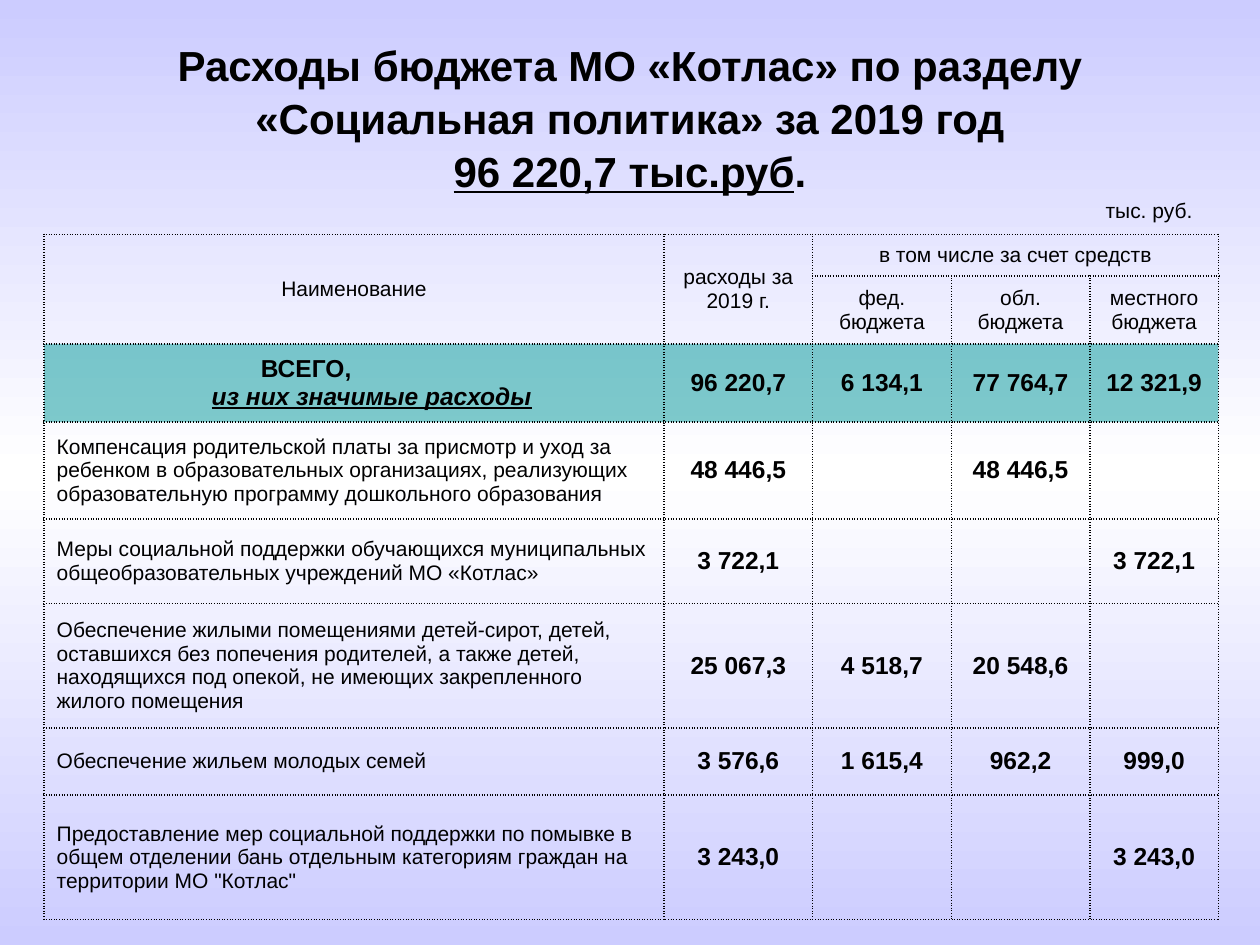
from copy import deepcopy

from lxml import etree
from pptx import Presentation
from pptx.dml.color import RGBColor
from pptx.enum.text import MSO_ANCHOR, PP_ALIGN
from pptx.oxml.ns import qn
from pptx.util import Inches, Pt

MIDDLE = MSO_ANCHOR.MIDDLE
LEFT, CENTER = PP_ALIGN.LEFT, PP_ALIGN.CENTER

COLORS = {"ink": "000000", "edge": "CCCCFF", "center": "FFFFFF", "total": "009999"}
FONT = "Arial"

COLUMNS = [4.92, 1.18, 1.1, 1.1, 1.02]
ROWS = [0.33, 0.54, 0.62, 0.77, 0.67, 0.99, 0.53, 0.99]
BUDGETS = ["фед. бюджета", "обл. бюджета", "местного бюджета"]
TOTALS = ["96 220,7", "6 134,1", "77 764,7", "12 321,9"]
EXPENSES = [
    ("Компенсация родительской платы за присмотр и уход за ребенком в "
     "образовательных организациях, реализующих образовательную программу "
     "дошкольного образования", "48 446,5", "", "48 446,5", ""),
    ("Меры социальной поддержки обучающихся муниципальных общеобразовательных "
     "учреждений МО «Котлас»", "3 722,1", "", "", "3 722,1"),
    ("Обеспечение жилыми помещениями детей-сирот, детей, оставшихся без попечения "
     "родителей, а также детей, находящихся под опекой, не имеющих закрепленного "
     "жилого помещения", "25 067,3", "4 518,7", "20 548,6", ""),
    ("Обеспечение жильем молодых семей", "3 576,6", "1 615,4", "962,2", "999,0"),
    ("Предоставление мер социальной поддержки по помывке в общем отделении бань "
     "отдельным категориям граждан на территории МО \"Котлас\"",
     "3 243,0", "", "", "3 243,0"),
]


def color(name):
    return RGBColor.from_string(COLORS[name])


def add_run(para, text, size, bold=False, italic=False, underline=False):
    span = para.add_run()
    span.text = text
    font = span.font
    font.name, font.size, font.bold = FONT, Pt(size), bold
    font.italic, font.underline = italic, underline
    font.color.rgb = color("ink")


def paint_background(page):
    """Vertical gradient, lightest in the middle."""
    fill = page.background.fill
    fill.gradient()
    fill.gradient_angle = 90
    stop_list = page.element.find(".//" + qn("a:gsLst"))
    stop_list.insert(1, deepcopy(stop_list[0]))
    for stop, position, name in zip(fill.gradient_stops, (0, 0.5, 1),
                                    ("edge", "center", "edge")):
        stop.position = position
        stop.color.rgb = color(name)


def add_text_box(page, box):
    """Middle-anchored box; returns its first paragraph, centred."""
    frame = page.shapes.add_textbox(*map(Inches, box)).text_frame
    frame.word_wrap = True
    frame.vertical_anchor = MIDDLE
    para = frame.paragraphs[0]
    para.alignment = CENTER
    return para


def add_title(page, box):
    para = add_text_box(page, box)
    para.line_spacing = 1.05
    add_run(para, "Расходы бюджета МО «Котлас» по разделу "
                  "«Социальная политика» за 2019 год", 24, bold=True)
    para.add_line_break()
    add_run(para, "96 220,7 тыс.руб", 24, bold=True, underline=True)
    add_run(para, ".", 24, bold=True)


def add_unit(page, box):
    add_run(add_text_box(page, box), "тыс. руб.", 12)


def add_dotted_borders(cell):
    properties = cell._tc.get_or_add_tcPr()
    for side in ("a:lnL", "a:lnR", "a:lnT", "a:lnB"):
        line = etree.SubElement(properties, qn(side), w=str(Pt(1)))
        fill = etree.SubElement(line, qn("a:solidFill"))
        etree.SubElement(fill, qn("a:srgbClr"), val=COLORS["ink"])
        etree.SubElement(line, qn("a:prstDash"), val="sysDot")


def fill_total(cell):
    """Half-transparent highlight of the totals row."""
    cell.fill.solid()
    cell.fill.fore_color.rgb = color("total")
    tint = cell._tc.tcPr.find(qn("a:solidFill") + "/" + qn("a:srgbClr"))
    etree.SubElement(tint, qn("a:alpha"), val="50000")


def write_cell(cell, text, size=12, bold=False, align=CENTER):
    para = cell.text_frame.paragraphs[0]
    para.alignment = align
    if text:
        add_run(para, text, size, bold)


def write_total_label(cell):
    """Two centred lines, the first set left of the middle, the second right."""
    cell.margin_right = Inches(0.86)
    write_cell(cell, "ВСЕГО,", 14, bold=True)
    para = cell.text_frame.add_paragraph()
    para.alignment = CENTER
    para._p.get_or_add_pPr().set("marL", str(Inches(1.04)))
    add_run(para, "из них значимые расходы", 14, True, True, True)


def write_header(table):
    for first, last, text in [((0, 0), (1, 0), "Наименование"),
                              ((0, 1), (1, 1), "расходы за 2019 г."),
                              ((0, 2), (0, 4), "в том числе за счет средств")]:
        table.cell(*first).merge(table.cell(*last))
        write_cell(table.cell(*first), text)
    for column, text in enumerate(BUDGETS, 2):
        write_cell(table.cell(1, column), text)


def add_expense_table(page, box):
    table = page.shapes.add_table(len(ROWS), len(COLUMNS), *map(Inches, box)).table
    table.first_row = table.horz_banding = False
    for column, width in zip(table.columns, COLUMNS):
        column.width = Inches(width)
    for row, height in zip(table.rows, ROWS):
        row.height = Inches(height)
    for cell in table.iter_cells():
        cell.vertical_anchor = MIDDLE
        add_dotted_borders(cell)
        cell.fill.background()

    write_header(table)
    write_total_label(table.cell(2, 0))
    for column in range(len(COLUMNS)):
        fill_total(table.cell(2, column))
    for row, (name, *amounts) in enumerate(EXPENSES, 3):
        write_cell(table.cell(row, 0), name, align=LEFT)
        for column, amount in enumerate(amounts, 1):
            write_cell(table.cell(row, column), amount, 14, bold=True)
    for column, amount in enumerate(TOTALS, 1):
        write_cell(table.cell(2, column), amount, 14, bold=True)


def main():
    deck = Presentation()
    deck.slide_width, deck.slide_height = Inches(10), Inches(7.5)
    page = deck.slides.add_slide(deck.slide_layouts[6])
    paint_background(page)
    add_title(page, (0.5, 0.3, 9, 1.25))
    add_expense_table(page, (0.35, 1.86, sum(COLUMNS), sum(ROWS)))
    add_unit(page, (8.47, 1.47, 1.3, 0.39))
    deck.save("out.pptx")


if __name__ == "__main__":
    main()
